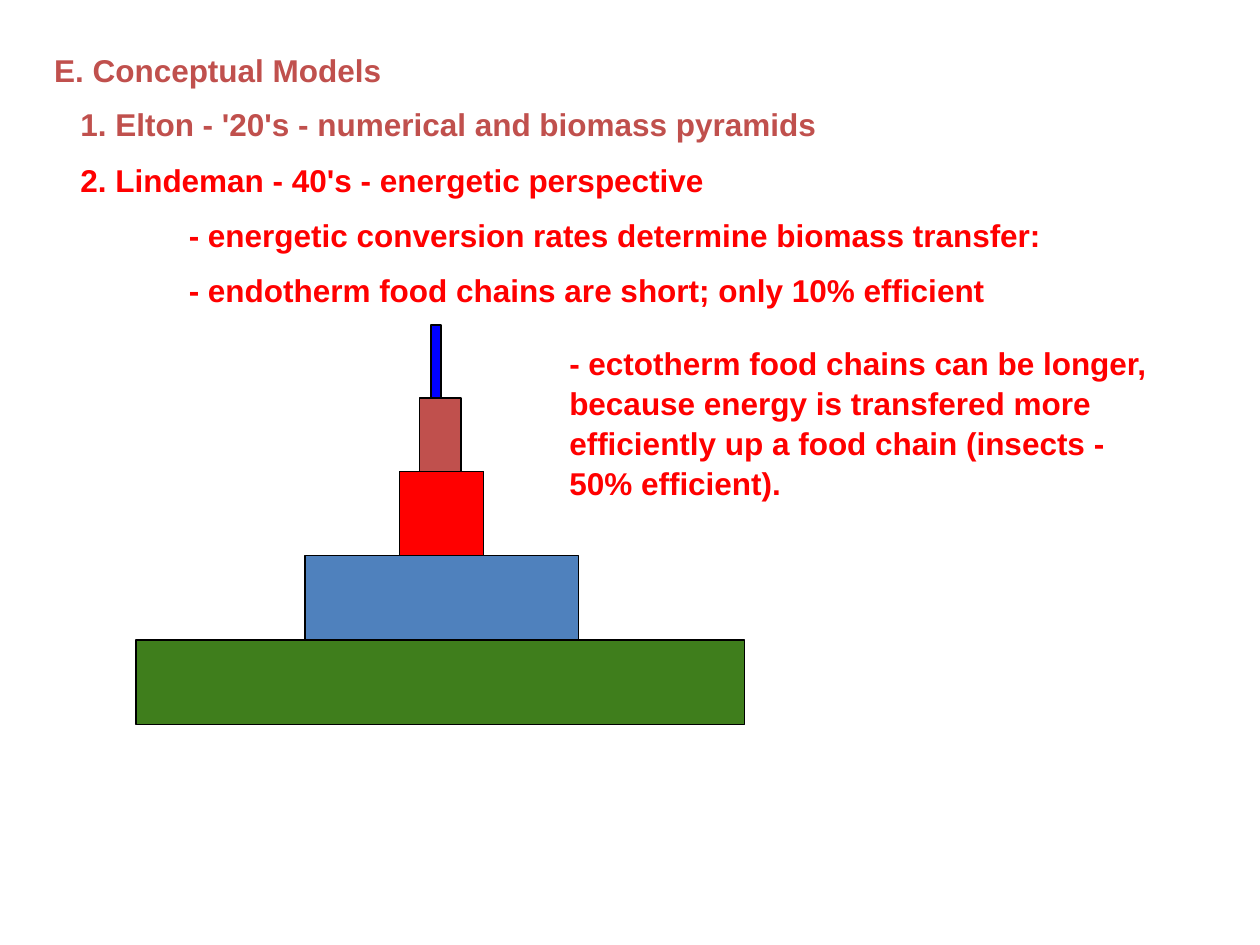
from pptx import Presentation
from pptx.dml.color import RGBColor
from pptx.enum.shapes import MSO_SHAPE as SHAPE
from pptx.enum.text import MSO_ANCHOR as ANCHOR, MSO_AUTO_SIZE as AUTO, PP_ALIGN as ALIGN
from pptx.util import Inches, Pt

BRICK = RGBColor(0xC0, 0x50, 0x4D)
RED = RGBColor(0xFF, 0x00, 0x00)
GREEN = RGBColor(0x3F, 0x7E, 0x1C)
STEEL = RGBColor(0x4F, 0x81, 0xBD)
BLUE = RGBColor(0x00, 0x00, 0xFF)
BLACK = RGBColor(0x00, 0x00, 0x00)


def fill_text(shape, lines):
    """Write (text, colour, indent in inches) lines as bold 18 pt paragraphs."""
    tf = shape.text_frame
    tf.word_wrap = True
    tf.auto_size = AUTO.NONE
    tf.vertical_anchor = ANCHOR.TOP
    for i, (text, color, indent) in enumerate(lines):
        p = tf.add_paragraph() if i else tf.paragraphs[0]
        p.alignment = ALIGN.LEFT
        p.line_spacing = 1.05
        p.space_before = Pt(9 if i else 0)
        if indent:
            p._p.get_or_add_pPr().set("marL", str(Inches(indent)))
        r = p.add_run()
        r.text = text
        r.font.name = "Arial"
        r.font.size = Pt(18)
        r.font.bold = True
        r.font.color.rgb = color


prs = Presentation()
prs.slide_width = Inches(10)
prs.slide_height = Inches(7.5)
s = prs.slides.add_slide(prs.slide_layouts[5])

# Title
title = s.shapes.title
title.left, title.top = Inches(0.33), Inches(0.34)
title.width, title.height = Inches(9.33), Inches(0.42)
fill_text(title, [("E. Conceptual Models", BRICK, 0)])

# Outline
outline = s.shapes.add_textbox(Inches(0.33), Inches(0.77), Inches(9.33), Inches(1.8))
fill_text(outline, [
    ("1. Elton - '20's - numerical and biomass pyramids", BRICK, 0.21),
    ("2. Lindeman - 40's - energetic perspective", RED, 0.21),
    ("- energetic conversion rates determine biomass transfer:", RED, 1.07),
    ("- endotherm food chains are short; only 10% efficient", RED, 1.07),
])

# Biomass pyramid, stacked from the base up: left, width, height, colour
levels = [
    (1.08, 4.83, 0.67, GREEN),
    (2.42, 2.17, 0.67, STEEL),
    (3.17, 0.67, 0.67, RED),
    (3.33, 0.33, 0.58, BRICK),
    (3.42, 0.08, 0.58, BLUE),
]
top = 5.75
for left, width, height, color in levels:
    top -= height
    sp = s.shapes.add_shape(SHAPE.RECTANGLE, Inches(left), Inches(top),
                            Inches(width), Inches(height))
    sp.shadow.inherit = False
    sp.fill.solid()
    sp.fill.fore_color.rgb = color
    sp.line.color.rgb = BLACK
    sp.line.width = Pt(0.75)

# Note beside the pyramid
note = s.shapes.add_textbox(Inches(4.42), Inches(2.67), Inches(4.83), Inches(1.3))
fill_text(note, [
    ("- ectotherm food chains can be longer, because energy is transfered more "
     "efficiently up a food chain (insects - 50% efficient).", RED, 0),
])

prs.save("out.pptx")
